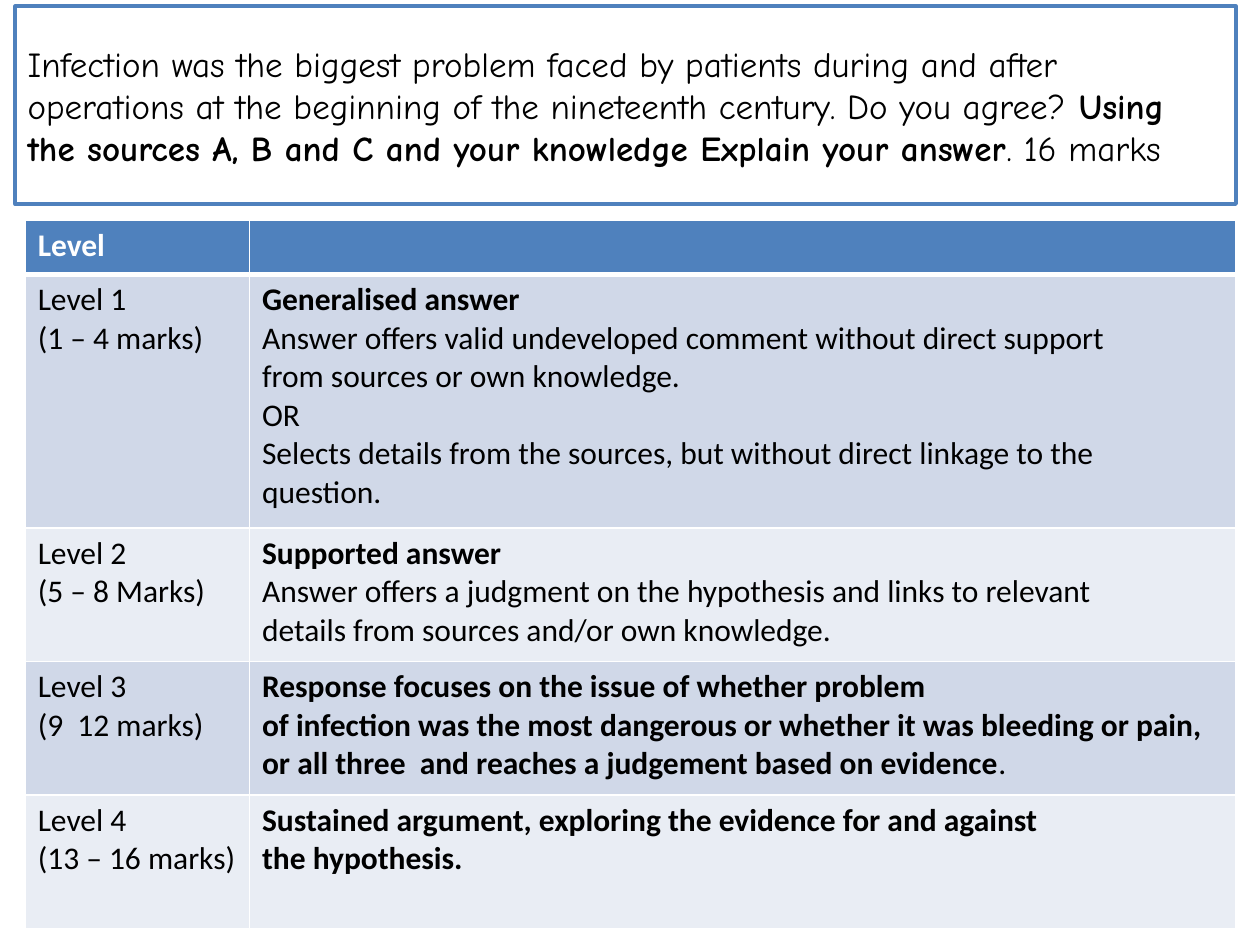
from lxml import etree
from pptx import Presentation
from pptx.dml.color import RGBColor
from pptx.enum.shapes import MSO_SHAPE
from pptx.enum.text import MSO_ANCHOR, PP_ALIGN
from pptx.oxml.ns import qn
from pptx.util import Inches, Pt

RECTANGLE = MSO_SHAPE.RECTANGLE
MIDDLE = MSO_ANCHOR.MIDDLE
LEFT = PP_ALIGN.LEFT

BLUE = RGBColor(0x4F, 0x81, 0xBD)
DARK_BAND = RGBColor(0xD0, 0xD8, 0xE8)
LIGHT_BAND = RGBColor(0xE9, 0xED, 0xF4)
WHITE = RGBColor(0xFF, 0xFF, 0xFF)
BLACK = RGBColor(0x00, 0x00, 0x00)

QUESTION_FONT = {"name": "Comic Neue", "size": Pt(20)}
TABLE_FONT = {"name": "Calibri", "size": Pt(18)}

# Each run is (text, bold)
QUESTION = [
    ("Infection was the biggest problem faced by patients during and after "
     "operations at the beginning of the nineteenth century. Do you agree?", False),
    (" Using the sources A, B and C and your knowledge Explain your answer", True),
    (". 16 marks", False),
]

# Each level is (level lines, descriptor paragraphs made of runs)
LEVELS = [
    (["Level 1", "(1 – 4 marks)"], [
        [("Generalised answer", True)],
        [("Answer offers valid undeveloped comment without direct support", False)],
        [("from sources or own knowledge.", False)],
        [("OR", False)],
        [("Selects details from the sources, but without direct linkage to the", False)],
        [("question.", False)],
    ]),
    (["Level 2", "(5 – 8 Marks)"], [
        [("Supported answer", True)],
        [("Answer offers a judgment on the hypothesis and links to relevant", False)],
        [("details from sources and/or own knowledge.", False)],
    ]),
    (["Level 3", "(9  12 marks)"], [
        [("Response focuses on the issue of whether problem", True)],
        [("of infection was the most dangerous or whether it was bleeding or pain, "
          "or all three  and reaches a judgement based on evidence", True), (".", False)],
    ]),
    (["Level 4", "(13 – 16 marks)"], [
        [("Sustained argument, exploring the evidence for and against", True)],
        [("the hypothesis.", True)],
    ]),
]
COLUMN_WIDTHS = [1.78, 7.83]
ROW_HEIGHTS = [0.43, 2.01, 1.06, 1.06, 1.06]


def write_text(text_frame, paragraphs, font, color):
    """Fill a text frame with paragraphs, each a list of (text, bold) runs."""
    for index, runs in enumerate(paragraphs):
        paragraph = text_frame.paragraphs[0] if index == 0 else text_frame.add_paragraph()
        paragraph.alignment = LEFT
        for text, bold in runs:
            run = paragraph.add_run()
            run.text = text
            for name, value in {**font, "bold": bold}.items():
                setattr(run.font, name, value)
            run.font.color.rgb = color


def set_borders(cell, bottom_width):
    """Draw white cell borders; they must come before the fill in the XML."""
    properties = cell._tc.get_or_add_tcPr()
    widths = {"lnL": 1, "lnR": 1, "lnT": 1, "lnB": bottom_width}
    for position, (side, width) in enumerate(widths.items()):
        line = etree.Element(qn(f"a:{side}"), w=str(Pt(width)))
        fill = etree.SubElement(line, qn("a:solidFill"))
        etree.SubElement(fill, qn("a:srgbClr"), val=str(WHITE))
        properties.insert(position, line)


def add_question(slide, left, top, width, height):
    box = slide.shapes.add_shape(RECTANGLE, left, top, width, height)
    box.shadow.inherit = False
    box.fill.solid()
    box.fill.fore_color.rgb = WHITE
    box.line.color.rgb = BLUE
    box.line.width = Pt(2)
    box.text_frame.word_wrap = True
    box.text_frame.vertical_anchor = MIDDLE
    write_text(box.text_frame, [QUESTION], QUESTION_FONT, BLACK)


def add_mark_scheme(slide, left, top, width, height):
    table = slide.shapes.add_table(
        len(ROW_HEIGHTS), len(COLUMN_WIDTHS), left, top, width, height).table
    for column, column_width in zip(table.columns, COLUMN_WIDTHS):
        column.width = Inches(column_width)
    for row, row_height in zip(table.rows, ROW_HEIGHTS):
        row.height = Inches(row_height)

    # Header row, then one row per level
    contents = [([[("Level", True)]], [[]])]
    contents += [([[(line, False)] for line in lines], descriptor)
                 for lines, descriptor in LEVELS]
    for row_index, row_contents in enumerate(contents):
        is_header = row_index == 0
        band = DARK_BAND if row_index % 2 else LIGHT_BAND
        for column_index, paragraphs in enumerate(row_contents):
            cell = table.cell(row_index, column_index)
            cell.fill.solid()
            cell.fill.fore_color.rgb = BLUE if is_header else band
            set_borders(cell, 3 if is_header else 1)
            write_text(cell.text_frame, paragraphs, TABLE_FONT,
                       WHITE if is_header else BLACK)


def main():
    presentation = Presentation()
    presentation.slide_width = Inches(10)
    presentation.slide_height = Inches(7.5)
    slide = presentation.slides.add_slide(presentation.slide_layouts[6])
    add_question(slide, Inches(0.12), Inches(0.05), Inches(9.69), Inches(1.57))
    add_mark_scheme(slide, Inches(0.2), Inches(1.75), Inches(9.61), Inches(5.62))
    presentation.save("out.pptx")


if __name__ == "__main__":
    main()
